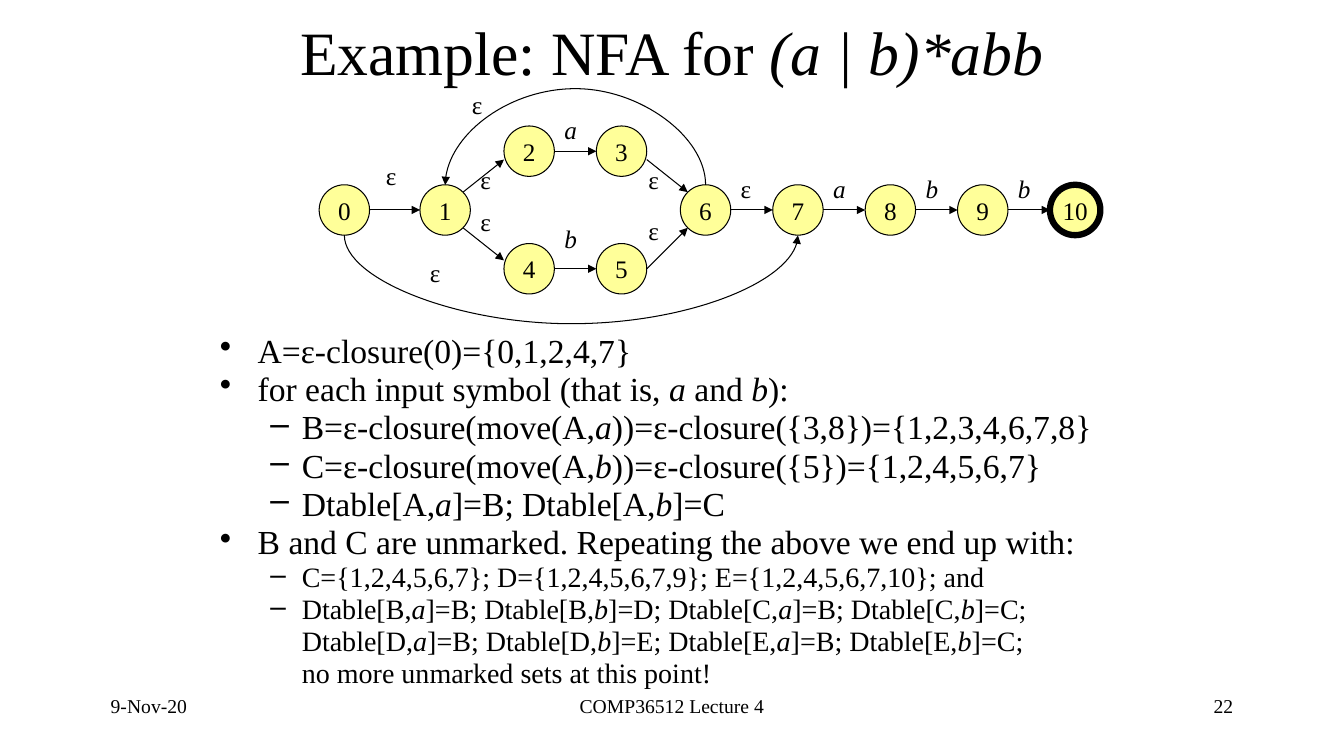
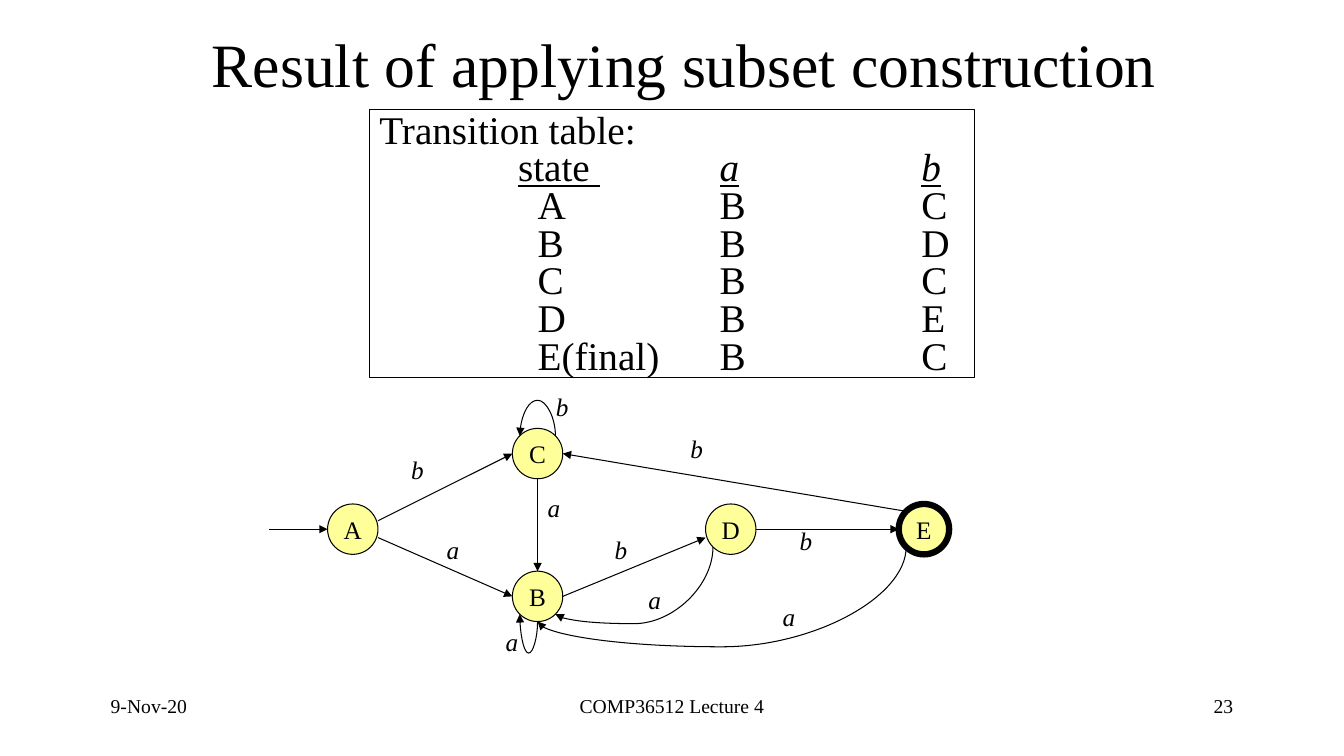
from math import sqrt

from lxml.etree import SubElement
from pptx import Presentation
from pptx.dml.color import RGBColor
from pptx.enum.shapes import MSO_CONNECTOR as LINK, MSO_SHAPE
from pptx.enum.text import MSO_ANCHOR, MSO_AUTO_SIZE, PP_ALIGN as ALIGN
from pptx.oxml.ns import qn
from pptx.util import Pt

FONT = "Times New Roman"
BLACK, YELLOW = "000000", "FFFF99"
STATE = 36
RADIUS = STATE / 2
DIAGONAL = RADIUS / sqrt(2)
THIN, THICK = 0.75, 4.5
SITES = {
    "top": (0, -RADIUS), "top left": (-DIAGONAL, -DIAGONAL),
    "left": (-RADIUS, 0), "bottom left": (-DIAGONAL, DIAGONAL),
    "bottom": (0, RADIUS), "bottom right": (DIAGONAL, DIAGONAL),
    "right": (RADIUS, 0), "top right": (DIAGONAL, -DIAGONAL),
}
SITE_ORDER = list(SITES)
SPOTS = SITES | {
    "left upper": (-RADIUS, -6), "left lower": (-RADIUS, 6),
    "right upper": (RADIUS, -6), "right lower": (RADIUS, 6),
}

FOOTER = [
    ("9-Nov-20", 72, 200, ALIGN.LEFT),
    ("COMP36512 Lecture 4", 328, 304, ALIGN.CENTER),
    ("{page}", 688, 200, ALIGN.RIGHT),
]

NFA = {
    "final": "10",
    "states": {
        "0": (228, 132), "1": (300, 132), "2": (360, 90), "3": (426, 90),
        "6": (486, 132), "4": (360, 174), "5": (426, 174), "7": (552, 132),
        "8": (618, 132), "9": (684, 132), "10": (750, 132),
    },
    "moves": [
        ("0", "right", "1", "left"), ("1", "top right", "2", "left lower"),
        ("1", "bottom right", "4", "left upper"), ("4", "right", "5", "left"),
        ("2", "right", "3", "left"), ("3", "right lower", "6", "top left"),
        ("5", "right", "6", "bottom left"), ("6", "right", "7", "left"),
        ("7", "right", "8", "left"), ("8", "right", "9", "left"),
        ("9", "right", "10", "left"),
    ],
    "curves": [
        ("0", "bottom", "7", "bottom", 226),
        ("6", "top", "1", "top", 69),
    ],
    "labels": {
        "ε": [(268.5, 111), (336, 144), (456, 150), (522, 120), (456, 114),
              (336, 114), (330, 60), (300, 180)],
        "_a_": [(396, 78), (588, 120)],
        "_b_": [(396, 156), (654, 120), (720, 120)],
    },
}

DFA = {
    "final": "E",
    "states": {"A": (234, 360), "B": (366, 408), "D": (504, 360),
               "E": (642, 360), "C": (366, 306)},
    "moves": [
        ("A", "right lower", "B", "left"), ("B", "right", "D", "left lower"),
        ("D", "right", "E", "left"), ("A", "right upper", "C", "left"),
        ("C", "bottom", "B", "top"), ("E", "top left", "C", "right"),
    ],
    "curves": [
        ("C", "top right", "C", "top left", 288),
        ("B", "bottom", "B", "bottom left", 466.5),
        ("E", "bottom left", "B", "bottom", 462),
        ("D", "bottom left", "B", "bottom right", 445.5),
    ],
    "labels": {
        "_a_": [(312, 378), (384, 348), (456, 414), (552, 426), (354, 444)],
        "_b_": [(286.5, 321), (486, 306), (564, 372), (432, 378), (390, 276)],
    },
}
DFA_ENTRY = (192, 378)

CLOSURE_STEPS = [
    (0, 24, "A=ε-closure(0)={0,1,2,4,7}"),
    (0, 24, "for each input symbol (that is, _a_ and _b_):"),
    (1, 24, "B=ε-closure(move(A,_a_))=ε-closure({3,8})={1,2,3,4,6,7,8}"),
    (1, 24, "C=ε-closure(move(A,_b_))=ε-closure({5})={1,2,4,5,6,7}"),
    (1, 24, "Dtable[A,_a_]=B; Dtable[A,_b_]=C"),
    (0, 24, "B and C are unmarked. Repeating the above we end up with:"),
    (1, 20, "C={1,2,4,5,6,7}; D={1,2,4,5,6,7,9}; E={1,2,4,5,6,7,10}; and"),
    (1, 20, "Dtable[B,_a_]=B; Dtable[B,_b_]=D; Dtable[C,_a_]=B; "
            "Dtable[C,_b_]=C; Dtable[D,_a_]=B; Dtable[D,_b_]=E; "
            "Dtable[E,_a_]=B; Dtable[E,_b_]=C;\nno more unmarked sets at this point!"),
]
BULLETS = [("•", 27, -27), ("–", 58.5, -22.5)]

TRANSITIONS = [
    ("A", "B", "C"), ("B", "B", "D"), ("C", "B", "C"),
    ("D", "B", "E"), ("E(final)", "B", "C"),
]
HEADING_TABS = (99, 243, 387)
STATE_TABS = (113, 243, 387)


def color(value):
    return RGBColor.from_string(value)


def write(paragraph, text, size, align=ALIGN.LEFT, underline=False):
    paragraph.alignment = align
    font = paragraph.font
    font.name, font.size = FONT, Pt(size)
    font.color.rgb = color(BLACK)
    for order, piece in enumerate(text.split("_")):
        for row, line in enumerate(piece.split("\n")):
            if row:
                paragraph.add_line_break()
            for part in line.replace("\t", "|\t|").split("|"):
                if part:
                    run = paragraph.add_run()
                    run.text = part
                    if order % 2:
                        run.font.italic = True
                    if underline and part != "\t":
                        run.font.underline = True


def add_text(slide, box, wrap=True):
    frame = slide.shapes.add_textbox(*map(Pt, box)).text_frame
    frame.word_wrap = wrap
    return frame


def new_slide(deck, title, box, page):
    slide = deck.slides.add_slide(deck.slide_layouts[5])
    heading = slide.shapes.title
    heading.left, heading.top, heading.width, heading.height = map(Pt, box)
    frame = heading.text_frame
    frame.vertical_anchor = MSO_ANCHOR.MIDDLE
    frame.auto_size = MSO_AUTO_SIZE.NONE
    paragraph = frame.paragraphs[0]
    for order, piece in enumerate(title):
        run = paragraph.add_run()
        run.text = piece
        if order:
            run.font.italic = True
    write(paragraph, "", 44, ALIGN.CENTER)
    for text, left, width, align in FOOTER:
        footer = add_text(slide, (left, 492, width, 36))
        write(footer.paragraphs[0], text.format(page=page), 14, align)
    return slide


def add_state(slide, name, left, top, weight):
    state = slide.shapes.add_shape(
        MSO_SHAPE.OVAL, Pt(left), Pt(top), Pt(STATE), Pt(STATE))
    state.shadow.inherit = False
    state.fill.solid()
    state.fill.fore_color.rgb = color(YELLOW)
    state.line.color.rgb = color(BLACK)
    state.line.width = Pt(weight)
    frame = state.text_frame
    frame.word_wrap = False
    frame.vertical_anchor = MSO_ANCHOR.MIDDLE
    write(frame.paragraphs[0], name, 18, ALIGN.CENTER)
    return state


def style_arrow(arrow):
    arrow.line.color.rgb = color(BLACK)
    arrow.line.width = Pt(THIN)
    properties = arrow.element.spPr
    SubElement(properties.find(qn("a:ln")), qn("a:tailEnd"), type="triangle")
    SubElement(properties, qn("a:effectLst"))


def add_straight(slide, start, end):
    arrow = slide.shapes.add_connector(LINK.STRAIGHT, *map(Pt, start + end))
    style_arrow(arrow)
    return arrow


def add_curve(slide, start, end, bend):
    (x1, y1), (x2, y2) = start, end
    across, down = x2 - x1, y2 - y1
    if abs(down) < 0.13:
        down = 0.13
    width, height = abs(down), abs(across)
    left = x1 + across / 2 - width / 2
    top = y1 + down / 2 - height / 2
    arrow = slide.shapes.add_connector(
        LINK.CURVE, Pt(left), Pt(top), Pt(left + width), Pt(top + height))
    properties = arrow.element.spPr
    frame = properties.find(qn("a:xfrm"))
    frame.set("rot", str(90 * 60000))
    if down < 0:
        frame.set("flipH", "1")
    if across > 0:
        frame.set("flipV", "1")
    adjust = round((bend - y1) / down * 100000)
    guides = properties.find(qn("a:prstGeom")).find(qn("a:avLst"))
    SubElement(guides, qn("a:gd"), name="adj1", fmla=f"val {adjust}")
    style_arrow(arrow)
    return arrow


def join(arrow, source=None, source_spot=None, target=None, target_spot=None):
    ends = arrow.element.nvCxnSpPr.cNvCxnSpPr
    if source_spot in SITES:
        begin = ends.get_or_add_stCxn()
        begin.id, begin.idx = source.shape_id, SITE_ORDER.index(source_spot)
    if target_spot in SITES:
        finish = ends.get_or_add_endCxn()
        finish.id, finish.idx = target.shape_id, SITE_ORDER.index(target_spot)


def draw_automaton(slide, automaton):
    places = automaton["states"]
    states = {
        name: add_state(slide, name, *place,
                        THICK if name == automaton["final"] else THIN)
        for name, place in places.items()
    }

    def point(name, spot):
        return tuple(corner + RADIUS + offset
                     for corner, offset in zip(places[name], SPOTS[spot]))

    for source, leave, target, enter, *bend in automaton["moves"] + automaton["curves"]:
        draw = add_curve if bend else add_straight
        arrow = draw(slide, point(source, leave), point(target, enter), *bend)
        join(arrow, states[source], leave, states[target], enter)
    for symbol, spots in automaton["labels"].items():
        for left, top in spots:
            label = add_text(slide, (left, top, 23, 29), wrap=False)
            write(label.paragraphs[0], symbol, 18)
    return states


def next_paragraph(frame, order):
    return frame.add_paragraph() if order else frame.paragraphs[0]


def add_closure_steps(slide):
    frame = add_text(slide, (150, 234, 648, 258))
    for order, (level, size, text) in enumerate(CLOSURE_STEPS):
        paragraph = next_paragraph(frame, order)
        paragraph.level = level
        paragraph.line_spacing = 0.95
        mark, margin, indent = BULLETS[level]
        properties = paragraph.font and paragraph._p.get_or_add_pPr()
        properties.set("marL", str(Pt(margin)))
        properties.set("indent", str(Pt(indent)))
        bullet = SubElement(properties, qn("a:buChar"), char=mark)
        properties.find(qn("a:defRPr")).addprevious(bullet)
        write(paragraph, text, size)


def add_transition_table(slide):
    box = slide.shapes.add_textbox(*map(Pt, (264, 78, 432, 192)))
    box.line.color.rgb = color(BLACK)
    box.line.width = Pt(THIN)
    frame = box.text_frame
    frame.word_wrap = True
    rows = [("Transition table:", ()), ("\tstate \t_a_\t_b_", HEADING_TABS)]
    rows += [("\t" + "\t".join(row), STATE_TABS) for row in TRANSITIONS]
    for order, (text, tabs) in enumerate(rows):
        paragraph = next_paragraph(frame, order)
        paragraph.line_spacing = 0.8
        if tabs:
            stops = SubElement(paragraph._p.get_or_add_pPr(), qn("a:tabLst"))
            for tab in tabs:
                SubElement(stops, qn("a:tab"), pos=str(Pt(tab)), algn="l")
        write(paragraph, text, 28, underline=tabs == HEADING_TABS)


def main():
    deck = Presentation()
    deck.slide_width, deck.slide_height = Pt(960), Pt(540)

    example = new_slide(deck, ["Example: NFA for ", "(a | b)*abb"],
                        (174, 6, 612, 60), 22)
    add_closure_steps(example)
    draw_automaton(example, NFA)

    result = new_slide(deck, ["Result of applying subset construction"],
                       (138, 12, 702, 66), 23)
    add_transition_table(result)
    states = draw_automaton(result, DFA)
    entry = add_straight(result, DFA_ENTRY, (234, 378))
    join(entry, target=states["A"], target_spot="left")

    deck.save("out.pptx")


if __name__ == "__main__":
    main()
